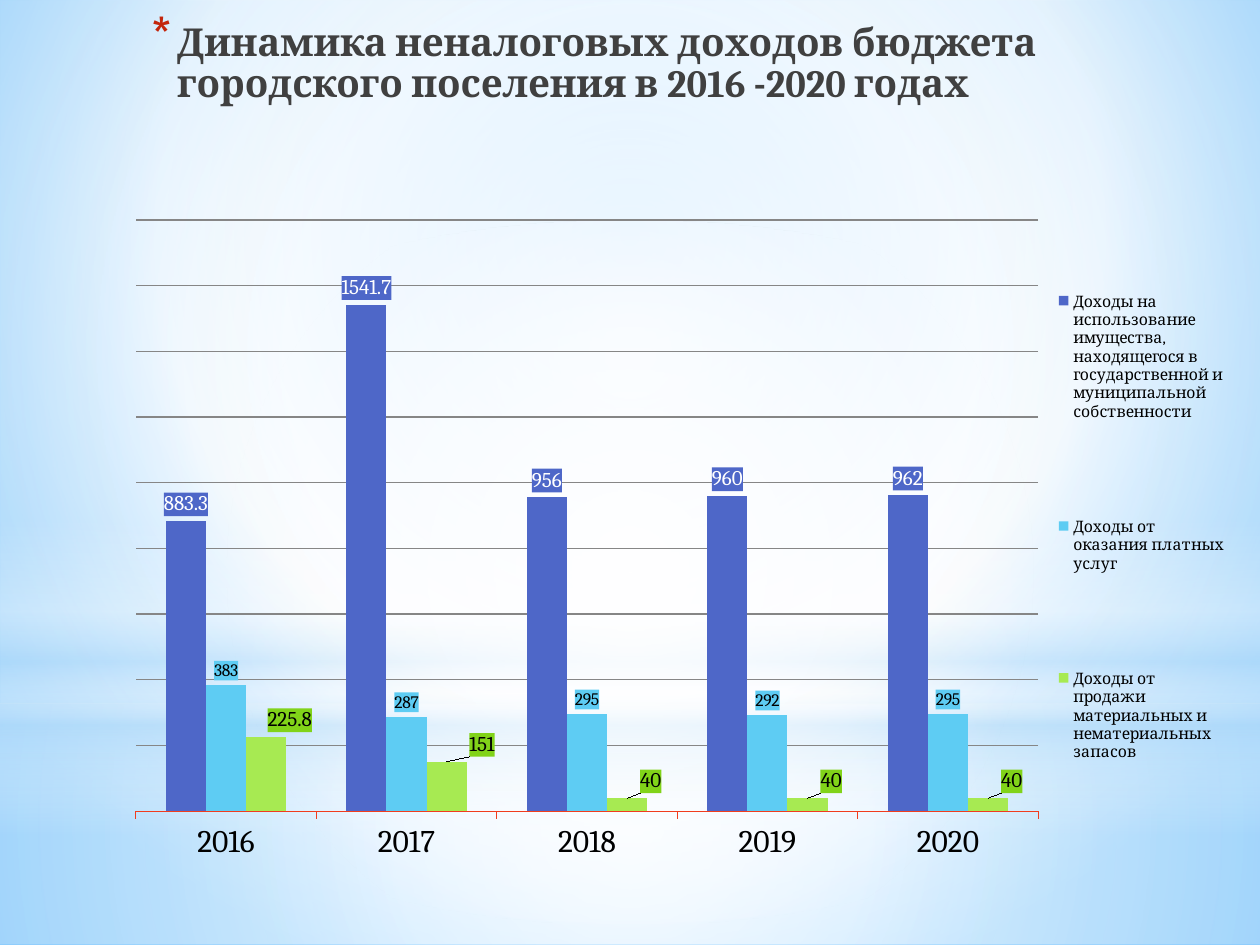
from lxml import etree
from pptx import Presentation
from pptx.chart.data import CategoryChartData
from pptx.dml.color import RGBColor
from pptx.enum.chart import (
    XL_CHART_TYPE, XL_LABEL_POSITION, XL_LEGEND_POSITION, XL_TICK_MARK)
from pptx.enum.shapes import MSO_SHAPE
from pptx.enum.text import MSO_ANCHOR, MSO_AUTO_SIZE, PP_ALIGN
from pptx.oxml.ns import qn
from pptx.util import Pt

COLUMN = XL_CHART_TYPE.COLUMN_CLUSTERED
ABOVE = XL_LABEL_POSITION.OUTSIDE_END
RIGHT = XL_LEGEND_POSITION.RIGHT
OUT, NO_TICK = XL_TICK_MARK.OUTSIDE, XL_TICK_MARK.NONE
RECT, OVAL = MSO_SHAPE.RECTANGLE, MSO_SHAPE.OVAL

WHITE = RGBColor(0xFF, 0xFF, 0xFF)
BLACK = RGBColor(0x00, 0x00, 0x00)
GRAY = RGBColor(0x40, 0x40, 0x40)
GRID = RGBColor(0x86, 0x86, 0x86)
RED = RGBColor(0xF1, 0x3C, 0x1E)
STAR = RGBColor(0xC3, 0x26, 0x0C)
BLUE = RGBColor(0x4E, 0x67, 0xC8)
CYAN = RGBColor(0x5E, 0xCC, 0xF3)
LIME = RGBColor(0xA7, 0xEA, 0x52)
GREEN = RGBColor(0x81, 0xD3, 0x19)
PALE = RGBColor(0xB4, 0xDC, 0xFA)
SKY = RGBColor(0x9E, 0xD5, 0xFF)
DEEP = RGBColor(0x5B, 0xB9, 0xFF)

MID = (50, 50, 50, 50)
# Shape, left, top, width, height, stops (place, colour, opacity), focus
LAYERS = [
    (RECT, 0, 402, 720, 138,
     [(0, WHITE, 91), (37, WHITE, 76), (100, PALE, 79)], MID),
    (RECT, 0, 0, 720, 402,
     [(0, WHITE, 89), (48, WHITE, 62), (100, PALE, 79)], MID),
    (RECT, 0, 297, 720, 180,
     [(0, WHITE, 0), (29, WHITE, 30), (45, PALE, 40), (55, WHITE, 26),
      (65, PALE, 60), (100, WHITE, 0)], None),
    (OVAL, 0, 126, 720, 402, [(0, WHITE, 100), (56, WHITE, 0)], MID),
]
YEARS = ["2016", "2017", "2018", "2019", "2020"]
# Name, values, bar colour, label fill, label colour, label size, label shifts
SERIES = [
    ("Доходы на использование имущества, находящегося в государственной "
     "и муниципальной собственности",
     (883.3, 1541.7, 956, 960, 962), BLUE, BLUE, WHITE, 12, ()),
    ("Доходы от оказания платных услуг",
     (383, 287, 295, 292, 295), CYAN, CYAN, BLACK, 10, ()),
    ("Доходы от продажи материальных и нематериальных запасов",
     (225.8, 151, 40, 40, 40), LIME, GREEN, BLACK, 12,
     (0.02, 0.03, 0.02, 0.02, 0.02)),
]


def sub(node, tag, **attrs):
    return etree.SubElement(
        node, qn(tag), {key: str(val) for key, val in attrs.items()})


def blend(fill, root, stops, focus):
    """Give root's first gradient fill new stops, round if it has a focus."""
    fill.gradient()
    grad = root.find(".//" + qn("a:gradFill"))
    for old in list(grad):
        grad.remove(old)
    group = sub(grad, "a:gsLst")
    for place, color, alpha in stops:
        stop = sub(group, "a:gs", pos=place * 1000)
        tint = sub(stop, "a:srgbClr", val=color)
        if alpha < 100:
            sub(tint, "a:alpha", val=alpha * 1000)
    if focus:
        path = sub(grad, "a:path", path="circle")
        sub(path, "a:fillToRect",
            **{side: val * 1000 for side, val in zip("ltrb", focus)})
    else:
        sub(grad, "a:lin", ang=90 * 60000, scaled=0)


def layout(**parts):
    """Make a manual chart layout from the given parts."""
    node = etree.Element(qn("c:layout"))
    manual = sub(node, "c:manualLayout")
    for key, val in parts.items():
        sub(manual, "c:" + key, val=val)
    return node


def place(parent, index, **parts):
    old = parent.find(qn("c:layout"))
    if old is not None:
        parent.remove(old)
    parent.insert(index, layout(**parts))


class Deck:
    def __init__(self, font):
        self.font = font
        self.prs = Presentation()
        self.prs.slide_width, self.prs.slide_height = Pt(720), Pt(540)
        self.slide = self.prs.slides.add_slide(self.prs.slide_layouts[5])

    def style(self, font, size, color, bold=False):
        font.name, font.size, font.bold = self.font, Pt(size), bold
        font.color.rgb = color

    def back(self, stops, focus):
        blend(self.slide.background.fill, self.slide.element, stops, focus)

    def layer(self, kind, left, top, width, height, stops, focus):
        shape = self.slide.shapes.add_shape(
            kind, Pt(left), Pt(top), Pt(width), Pt(height))
        shape.shadow.inherit = False
        shape.line.fill.background()
        blend(shape.fill, shape.element, stops, focus)

    def title(self, text, left, top, width, height):
        box = self.slide.shapes.title
        box.left, box.top = Pt(left), Pt(top)
        box.width, box.height = Pt(width), Pt(height)
        box.element.getparent().append(box.element)  # in front of the layers
        frame = box.text_frame
        frame.word_wrap, frame.auto_size = True, MSO_AUTO_SIZE.NONE
        frame.vertical_anchor = MSO_ANCHOR.TOP
        para = frame.paragraphs[0]
        para.alignment, para.line_spacing = PP_ALIGN.LEFT, 0.9
        para.space_after = Pt(3)
        run = para.add_run()
        run.text = text
        self.style(run.font, 22, GRAY, True)
        props = para._p.get_or_add_pPr()
        props.set("marL", str(Pt(18)))
        props.set("indent", str(Pt(-14.4)))
        sub(sub(props, "a:buClr"), "a:srgbClr", val=STAR)
        sub(props, "a:buSzPct", val=130000)
        sub(props, "a:buChar", char="*")

    def chart(self, left, top, width, height):
        data = CategoryChartData()
        data.categories = YEARS
        for name, vals, *_ in SERIES:
            data.add_series(name, vals)
        chart = self.slide.shapes.add_chart(
            COLUMN, Pt(left), Pt(top), Pt(width), Pt(height), data).chart
        self.style(chart.font, 18, BLACK)
        chart.has_title = False
        self.axes(chart)
        plot = chart.plots[0]
        plot.gap_width, plot.overlap, plot.vary_by_categories = 150, 0, False
        nodes = chart.element.iter(qn("c:ser"))
        for ser, node, row in zip(plot.series, nodes, SERIES):
            self.bars(ser, node, *row[2:])
        place(chart.element.find(".//" + qn("c:plotArea")), 0,
              layoutTarget="inner", xMode="edge", yMode="edge",
              x=0.069, y=0.04, w=0.764, h=0.861)
        chart.has_legend = True
        chart.legend.position = RIGHT
        chart.legend.include_in_layout = False
        self.style(chart.legend.font, 9, BLACK)
        place(chart.element.find(".//" + qn("c:legend")), 1,
              xMode="edge", yMode="edge", x=0.855, y=0.005, w=0.14, h=0.965)

    def axes(self, chart):
        cat, val = chart.category_axis, chart.value_axis
        cat.major_tick_mark, cat.minor_tick_mark = OUT, NO_TICK
        cat.format.line.color.rgb, cat.format.line.width = RED, Pt(0.75)
        self.style(cat.tick_labels.font, 18, BLACK)
        val.minimum_scale, val.maximum_scale, val.major_unit = 0, 1800, 200
        val.visible, val.has_major_gridlines = False, True
        line = val.major_gridlines.format.line
        line.color.rgb, line.width = GRID, Pt(0.75)

    def bars(self, ser, node, color, back, ink, size, shifts):
        ser.format.fill.solid()
        ser.format.fill.fore_color.rgb = color
        ser.invert_if_negative = False
        marks = ser.data_labels
        marks.show_value, marks.position = True, ABOVE
        self.style(marks.font, size, ink)
        for index, shift in enumerate(shifts):
            mark = ser.points[index].data_label
            mark.position = ABOVE
            self.style(mark.font, size, ink)
            spot = node.findall(".//" + qn("c:dLbl"))[index]
            place(spot, 1, x=shift, y=0)
        for text in list(node.iter(qn("c:txPr"))):
            props = etree.Element(qn("c:spPr"))
            sub(sub(props, "a:solidFill"), "a:srgbClr", val=back)
            text.addprevious(props)


def main():
    deck = Deck("Cambria")
    deck.back([(0, SKY, 100), (60, WHITE, 100), (100, DEEP, 100)],
              (20, 10, 20, 60))
    for row in LAYERS:
        deck.layer(*row)
    deck.title("Динамика неналоговых доходов бюджета городского поселения "
               "в 2016 -2020 годах", 76, 9.5, 590, 79)
    deck.chart(31, 110, 675, 392.5)
    deck.prs.save("out.pptx")


if __name__ == "__main__":
    main()
